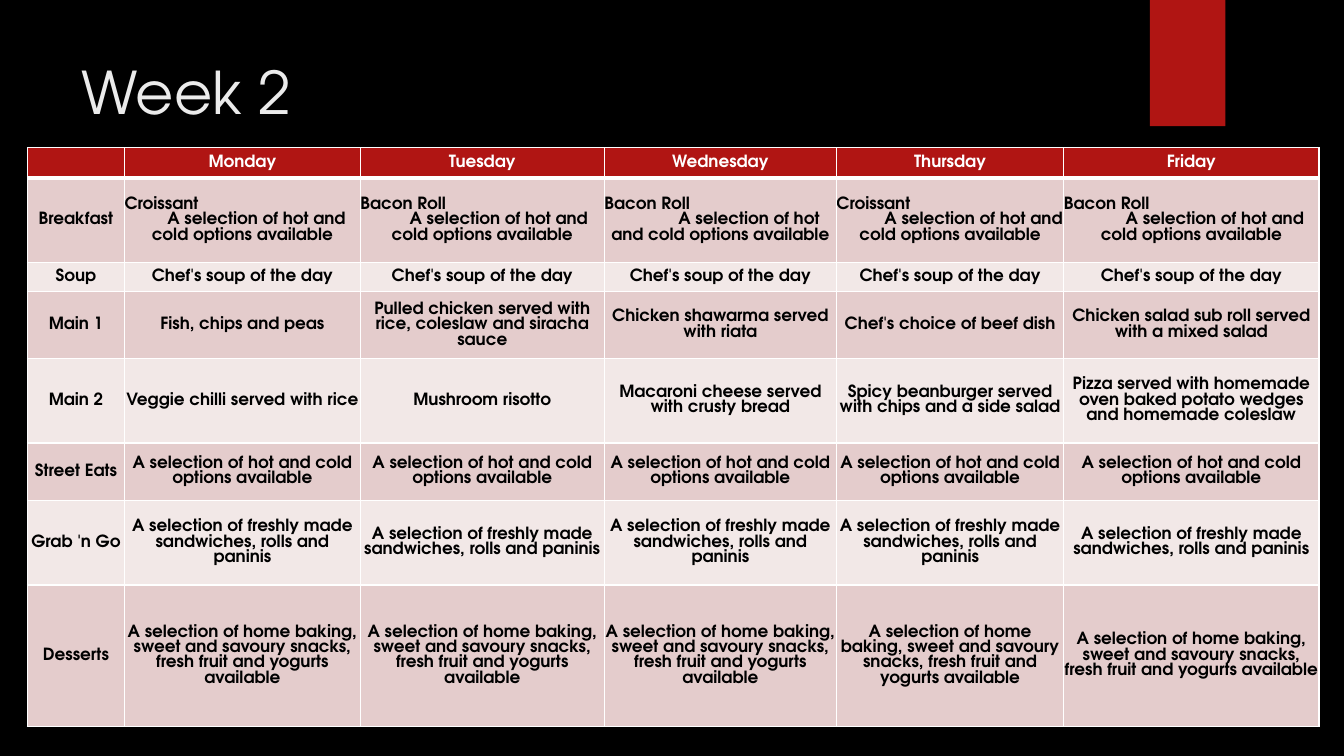
"""Builds the Week 2 lunch menu slide."""
import lxml.etree
import pptx
import pptx.dml.color
import pptx.enum.shapes
import pptx.enum.text
import pptx.oxml.ns
import pptx.util

Cm, Pt = pptx.util.Cm, pptx.util.Pt
ALIGN = pptx.enum.text.PP_ALIGN
ANCHOR = pptx.enum.text.MSO_ANCHOR
COLOURS = {
    "background": "000000", "accent": "B01513", "title": "EBEBEB",
    "white": "FFFFFF", "text": "000000", "odd": "E4CCCC", "even": "F2E8E7",
}
DAYS = ["Monday", "Tuesday", "Wednesday", "Thursday", "Friday"]
HOT_COLD = "A selection of hot and cold options available"
BREAKFASTS = ["Croissant", "Bacon Roll", "Bacon Roll", "Croissant", "Bacon Roll"]
BREAKFAST_INDENTS = [0.71, 0.83, 1.44, 1.18, 1.18]
MENU = [
    ("Soup", ["Chef's soup of the day"] * 5),
    ("Main 1", ["Fish, chips and peas",
                "Pulled chicken served with rice, coleslaw and siracha sauce",
                "Chicken shawarma served with riata",
                "Chef's choice of beef dish",
                "Chicken salad sub roll served with a mixed salad"]),
    ("Main 2", ["Veggie chilli served with rice",
                "Mushroom risotto",
                "Macaroni cheese served with crusty bread",
                "Spicy beanburger served with chips and a side salad",
                "Pizza served with homemade oven baked potato wedges and homemade coleslaw"]),
    ("Street Eats", [HOT_COLD] * 5),
    ("Grab 'n Go", ["A selection of freshly made sandwiches, rolls and paninis"] * 5),
    ("Desserts", ["A selection of home baking, sweet and savoury snacks, "
                  "fresh fruit and yogurts available"] * 5),
]
COLUMN_WIDTHS = [2.45, 5.94, 6.15, 5.85, 5.73, 6.43]
ROW_HEIGHTS = [0.74, 2.13, 0.74, 1.68, 2.13, 1.45, 2.13, 3.56]


class MenuSlide:
    def __init__(self, slide, font):
        self.slide = slide
        self.font = font
        self.paint(slide.background.fill, "background")

    def colour(self, name):
        return pptx.dml.color.RGBColor.from_string(COLOURS[name])

    def paint(self, fill, name):
        fill.solid()
        fill.fore_color.rgb = self.colour(name)

    def add_text(self, paragraph, text, size, colour, bold=False):
        run = paragraph.add_run()
        run.text = text
        run.font.name = self.font
        run.font.size = Pt(size)
        run.font.bold = bold
        run.font.color.rgb = self.colour(colour)

    def ribbon(self, left, top, width, height):
        ribbon = self.slide.shapes.add_shape(
            pptx.enum.shapes.MSO_SHAPE.RECTANGLE, Cm(left), Cm(top), Cm(width), Cm(height))
        ribbon.shadow.inherit = False
        self.paint(ribbon.fill, "accent")
        ribbon.line.fill.background()

    def title(self, text, left, top, width, height):
        frame = self.slide.shapes.add_textbox(
            Cm(left), Cm(top), Cm(width), Cm(height)).text_frame
        frame.word_wrap = True
        frame.vertical_anchor = ANCHOR.TOP
        self.add_text(frame.paragraphs[0], text, 42, "title")

    def table(self, left, top, widths, heights):
        table = self.slide.shapes.add_table(
            len(heights), len(widths), Cm(left), Cm(top),
            Cm(sum(widths)), Cm(sum(heights))).table
        for column, width in zip(table.columns, widths):
            column.width = Cm(width)
        for row, height in zip(table.rows, heights):
            row.height = Cm(height)
        return table

    def borders(self, cell, top, bottom):
        properties = cell._tc.get_or_add_tcPr()
        for side, width in (("L", 1), ("R", 1), ("T", top), ("B", bottom)):
            line = lxml.etree.SubElement(
                properties, pptx.oxml.ns.qn(f"a:ln{side}"), w=str(Pt(width)))
            fill = lxml.etree.SubElement(line, pptx.oxml.ns.qn("a:solidFill"))
            lxml.etree.SubElement(
                fill, pptx.oxml.ns.qn("a:srgbClr"), val=COLOURS["white"])

    def cell(self, cell, row, lines):
        self.borders(cell, 3 if row == 1 else 1, 3 if row == 0 else 1)
        self.paint(cell.fill, "accent" if row == 0 else "odd" if row % 2 else "even")
        cell.margin_left = cell.margin_right = cell.margin_top = cell.margin_bottom = 0
        cell.vertical_anchor = ANCHOR.MIDDLE
        frame = cell.text_frame
        for number, (text, align, indent) in enumerate(lines):
            paragraph = frame.add_paragraph() if number else frame.paragraphs[0]
            paragraph.alignment = align
            paragraph.line_spacing = Pt(11)
            if indent:
                paragraph._p.get_or_add_pPr().set("indent", str(Cm(indent)))
            self.add_text(paragraph, text, 12, "white" if row == 0 else "text", True)


def centred(text):
    return [(text, ALIGN.CENTER, 0)]


def main():
    deck = pptx.Presentation()
    deck.slide_width, deck.slide_height = Cm(33.87), Cm(19.05)
    page = MenuSlide(deck.slides.add_slide(deck.slide_layouts[6]), "TeX Gyre Adventor")
    page.ribbon(28.98, 0, 1.9, 3.18)
    page.title("Week 2", 1.8, 1.27, 26.14, 3.89)

    breakfast = [[(dish, ALIGN.LEFT, 0), (HOT_COLD, ALIGN.CENTER, indent)]
                 for dish, indent in zip(BREAKFASTS, BREAKFAST_INDENTS)]
    rows = [[centred(text) for text in ["", *DAYS]],
            [centred("Breakfast"), *breakfast]]
    rows += [[centred(text) for text in [meal, *dishes]] for meal, dishes in MENU]

    menu = page.table(0.69, 3.72, COLUMN_WIDTHS, ROW_HEIGHTS)
    for row, contents in enumerate(rows):
        for column, lines in enumerate(contents):
            page.cell(menu.cell(row, column), row, lines)
    deck.save("out.pptx")


if __name__ == "__main__":
    main()
